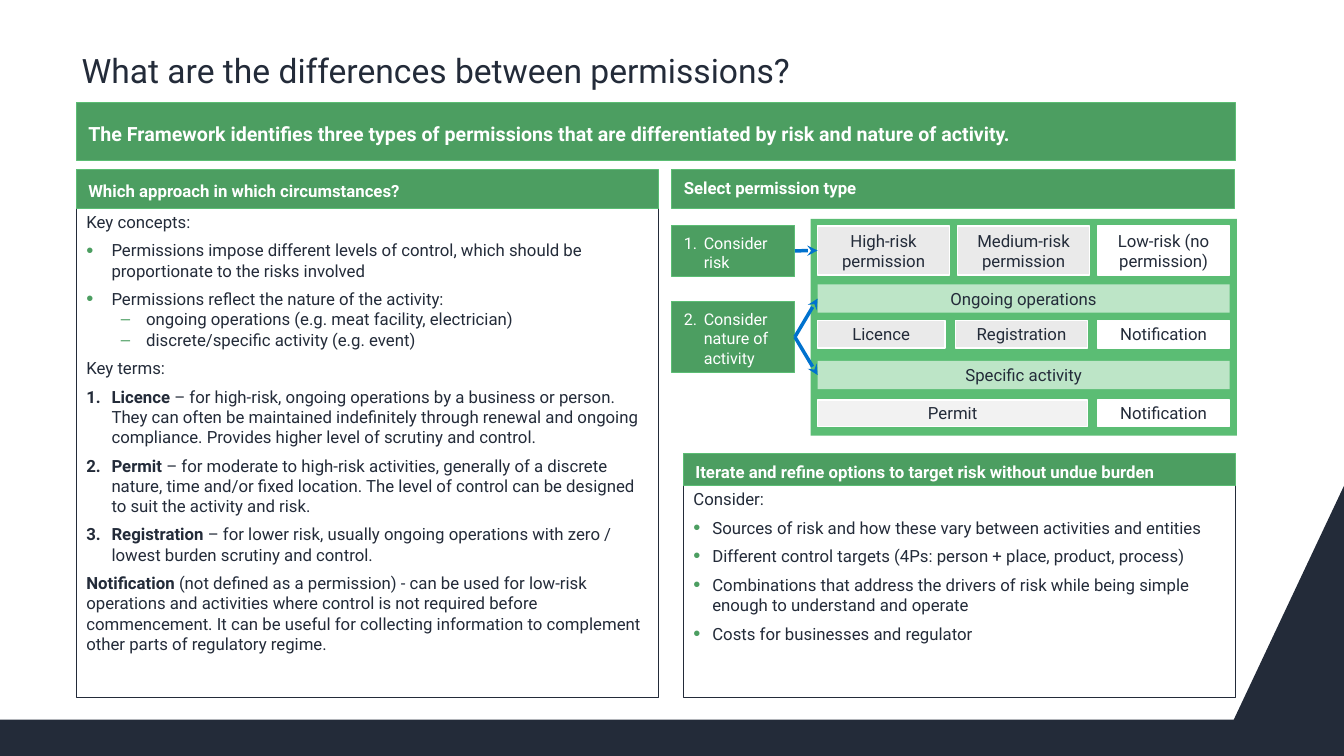
from lxml import etree
from pptx import Presentation
from pptx.dml.color import RGBColor
from pptx.enum.shapes import MSO_CONNECTOR, MSO_SHAPE
from pptx.enum.text import MSO_ANCHOR, PP_ALIGN
from pptx.oxml.ns import qn
from pptx.util import Pt

RECTANGLE = MSO_SHAPE.RECTANGLE
STRAIGHT = MSO_CONNECTOR.STRAIGHT
TOP, MIDDLE = MSO_ANCHOR.TOP, MSO_ANCHOR.MIDDLE
LEFT, CENTER = PP_ALIGN.LEFT, PP_ALIGN.CENTER
LEFT_SIDE, RIGHT_SIDE = 1, 3

FONT = "Roboto"
NAVY, WHITE, BLUE = "232B39", "FFFFFF", "0072CE"
GREEN, BRIGHT_GREEN, PALE_GREEN = "4C9E61", "5BBD74", "BDE5C7"
GREY, LIGHT_GREY = "EAEAEA", "F2F2F2"

HEADER_INSETS = (8.5, 5.65, 8.5, 2.85)
CELL_INSETS = (5.65, 2.85, 5.65, 2.85)
PANEL_INSETS = (7.2, 3.6, 7.2, 3.6)

MARGIN = 54.6
PERMISSION_LEFT = 584
LAST_COLUMN = 784
CELL_WIDTH = 94.3

APPROACH = [
    dict(text="Key concepts:"),
    dict(text="Permissions impose different levels of control, which should be "
              "proportionate to the risks involved", bullet="•", indent=18),
    dict(text="Permissions reflect the nature of the activity:", bullet="•", indent=18, after=0),
    dict(text="ongoing operations (e.g. meat facility, electrician)",
         bullet="–", margin=42.75, indent=18, level=1, after=0),
    dict(text="discrete/specific activity (e.g. event)",
         bullet="–", margin=42.75, indent=18, level=1),
    dict(text="Key terms:"),
    dict(lead="Licence", text=" – for high-risk, ongoing operations by a business or person. "
         "They can often be maintained indefinitely through renewal and ongoing compliance. "
         "Provides higher level of scrutiny and control.", numbered=True, indent=18),
    dict(lead="Permit", text=" – for moderate to high-risk activities, generally of a discrete "
         "nature, time and/or fixed location. The level of control can be designed to suit "
         "the activity and risk.", numbered=True, indent=18),
    dict(lead="Registration", text=" – for lower risk, usually ongoing operations with zero / "
         "lowest burden scrutiny and control.", numbered=True, indent=18),
    dict(lead="Notification", text=" (not defined as a permission) - can be used for low-risk "
         "operations and activities where control is not required before commencement. It can be "
         "useful for collecting information to complement other parts of regulatory regime."),
]
CONSIDERATIONS = [
    "Sources of risk and how these vary between activities and entities",
    "Different control targets (4Ps: person + place, product, process)",
    "Combinations that address the drivers of risk while being simple enough to "
    "understand and operate",
    "Costs for businesses and regulator",
]
PERMISSION_ROWS = [
    (161.3, 35.3, [("High-risk permission", PERMISSION_LEFT, CELL_WIDTH, GREY),
                   ("Medium-risk permission", 684, CELL_WIDTH, GREY),
                   ("Low-risk (no permission)", LAST_COLUMN, CELL_WIDTH, WHITE)]),
    (229, 19.5, [("Licence", PERMISSION_LEFT, 91, GREY),
                 ("Registration", 682.5, CELL_WIDTH, GREY),
                 ("Notification", LAST_COLUMN, CELL_WIDTH, WHITE)]),
    (285.8, 18.7, [("Permit", PERMISSION_LEFT, 193, LIGHT_GREY),
                   ("Notification", LAST_COLUMN, CELL_WIDTH, WHITE)]),
]


def rgb(color):
    return RGBColor.from_string(color)


def write(frame, text, lead="", size=12, color=NAVY, bold=False, align=LEFT, before=0, after=0,
          spacing=None, level=0, margin=None, indent=0, bullet=None, numbered=False):
    paragraph = frame.paragraphs[0]
    if paragraph.runs:
        paragraph = frame.add_paragraph()
    paragraph.alignment = align
    paragraph.level = level
    paragraph.space_before, paragraph.space_after = Pt(before), Pt(after)
    if spacing:
        paragraph.line_spacing = spacing
    properties = paragraph._p.get_or_add_pPr()
    properties.set("marL", str(Pt(indent if margin is None else margin)))
    properties.set("indent", str(Pt(-indent)))
    if bullet:
        bullet_color = etree.SubElement(properties, qn("a:buClr"))
        etree.SubElement(bullet_color, qn("a:srgbClr"), val=GREEN)
        if bullet == "•":
            etree.SubElement(properties, qn("a:buSzPct"), val="120000")
        etree.SubElement(properties, qn("a:buFont"), typeface="Arial")
        etree.SubElement(properties, qn("a:buChar"), char=bullet)
    elif numbered:
        etree.SubElement(properties, qn("a:buFont"), typeface="+mj-lt")
        etree.SubElement(properties, qn("a:buAutoNum"), type="arabicPeriod")
    else:
        etree.SubElement(properties, qn("a:buNone"))
    for words, weight in ((lead, True), (text, bold)):
        if words:
            run = paragraph.add_run()
            run.text = words
            run.font.name, run.font.size, run.font.bold = FONT, Pt(size), weight
            run.font.color.rgb = rgb(color)


def paint(shape, fill=None, line=None, weight=0.75):
    shape.shadow.inherit = False
    if fill:
        shape.fill.solid()
        shape.fill.fore_color.rgb = rgb(fill)
    else:
        shape.fill.background()
    if line:
        shape.line.color.rgb = rgb(line)
        shape.line.width = Pt(weight)
    else:
        shape.line.fill.background()


def set_frame(frame, insets, anchor):
    frame.word_wrap = True
    frame.vertical_anchor = anchor
    (frame.margin_left, frame.margin_top,
     frame.margin_right, frame.margin_bottom) = map(Pt, insets)


def add_box(slide, left, top, width, height, fill=None, line=None, weight=0.75,
            insets=PANEL_INSETS, anchor=TOP):
    box = slide.shapes.add_shape(RECTANGLE, Pt(left), Pt(top), Pt(width), Pt(height))
    paint(box, fill, line, weight)
    set_frame(box.text_frame, insets, anchor)
    return box


def add_header(slide, text, left, top, width, height, anchor=TOP, **text_format):
    header = add_box(slide, left, top, width, height, GREEN, BRIGHT_GREEN,
                     insets=HEADER_INSETS, anchor=anchor)
    write(header.text_frame, text, color=WHITE, **text_format)
    return header


def add_panel(slide, paragraphs, left, top, width, height):
    panel = add_box(slide, left, top, width, height, line=NAVY)
    for paragraph in paragraphs:
        write(panel.text_frame, **{"after": 6, **paragraph})


def add_cell(slide, text, left, top, width, height, fill):
    cell = add_box(slide, left, top, width, height, fill, WHITE, 1, CELL_INSETS, MIDDLE)
    write(cell.text_frame, text, align=CENTER, before=6, after=6)
    return cell


def add_band(slide, text, top):
    band = add_box(slide, PERMISSION_LEFT, top, 294.4, 20.2, PALE_GREEN, insets=CELL_INSETS)
    write(band.text_frame, text, align=CENTER)
    return band


def add_arrow(slide, step, target):
    arrow = slide.shapes.add_connector(STRAIGHT, 0, 0, 0, 0)
    arrow.begin_connect(step, RIGHT_SIDE)
    arrow.end_connect(target, LEFT_SIDE)
    arrow.line.color.rgb = rgb(BLUE)
    arrow.line.width = Pt(2.5)
    etree.SubElement(arrow.line._get_or_add_ln(), qn("a:tailEnd"), type="stealth")
    etree.SubElement(arrow._element.spPr, qn("a:effectLst"))


def add_footer(slide):
    outline = slide.shapes.build_freeform(Pt(881.3), Pt(514), scale=1.0)
    corners = [(0, 514), (0, 540), (960, 540), (960, 347)]
    outline.add_line_segments([(Pt(x), Pt(y)) for x, y in corners], close=True)
    paint(outline.convert_to_shape(), NAVY)


def set_title(slide, text):
    title = slide.shapes.title
    title.left, title.top, title.width, title.height = Pt(55.4), Pt(31.7), Pt(828), Pt(40.3)
    set_frame(title.text_frame, (2.85, 3.6, 2.85, 3.6), MIDDLE)
    write(title.text_frame, text, size=24, spacing=0.9)


def add_permission_grid(slide):
    add_box(slide, 579, 156.4, 304.5, 154.8, BRIGHT_GREEN)
    cells = [add_cell(slide, text, left, top, width, height, fill)
             for top, height, row in PERMISSION_ROWS
             for text, left, width, fill in row]
    return cells[0], add_band(slide, "Ongoing operations", 203.2), add_band(
        slide, "Specific activity", 257.8)


def main():
    presentation = Presentation()
    presentation.slide_width, presentation.slide_height = Pt(960), Pt(540)
    slide = presentation.slides.add_slide(presentation.slide_layouts[5])
    add_footer(slide)
    set_title(slide, "What are the differences between permissions?")
    add_header(slide, "The Framework identifies three types of permissions that are "
               "differentiated by risk and nature of activity.",
               MARGIN, 73.6, 828, 41, MIDDLE, size=14, bold=True)

    add_panel(slide, APPROACH, MARGIN, 147.6, 415.5, 350.4)
    add_header(slide, "Which approach in which circumstances?",
               MARGIN, 121.4, 415.5, 27.4, MIDDLE, bold=True)

    add_header(slide, "Select permission type", 480, 121.4, 402, 27.4, bold=True)
    high_risk, ongoing, specific = add_permission_grid(slide)
    step_format = dict(size=11.5, indent=14.2)
    risk_step = add_header(slide, "1.\tConsider risk", 480, 161, 87.8, 36.4, **step_format)
    activity_step = add_header(slide, "2.\tConsider nature of activity",
                               480, 215.4, 87.8, 50.6, **step_format)
    add_arrow(slide, risk_step, high_risk)
    for activity in (ongoing, specific):
        add_arrow(slide, activity_step, activity)

    considerations = [dict(text=text, bullet="•", indent=13.5) for text in CONSIDERATIONS]
    add_panel(slide, [dict(text="Consider:")] + considerations, 488.2, 345.6, 394, 152.4)
    add_header(slide, "Iterate and refine options to target risk without undue burden",
               488.2, 324, 394, 23, bold=True)
    presentation.save("out.pptx")


if __name__ == "__main__":
    main()
